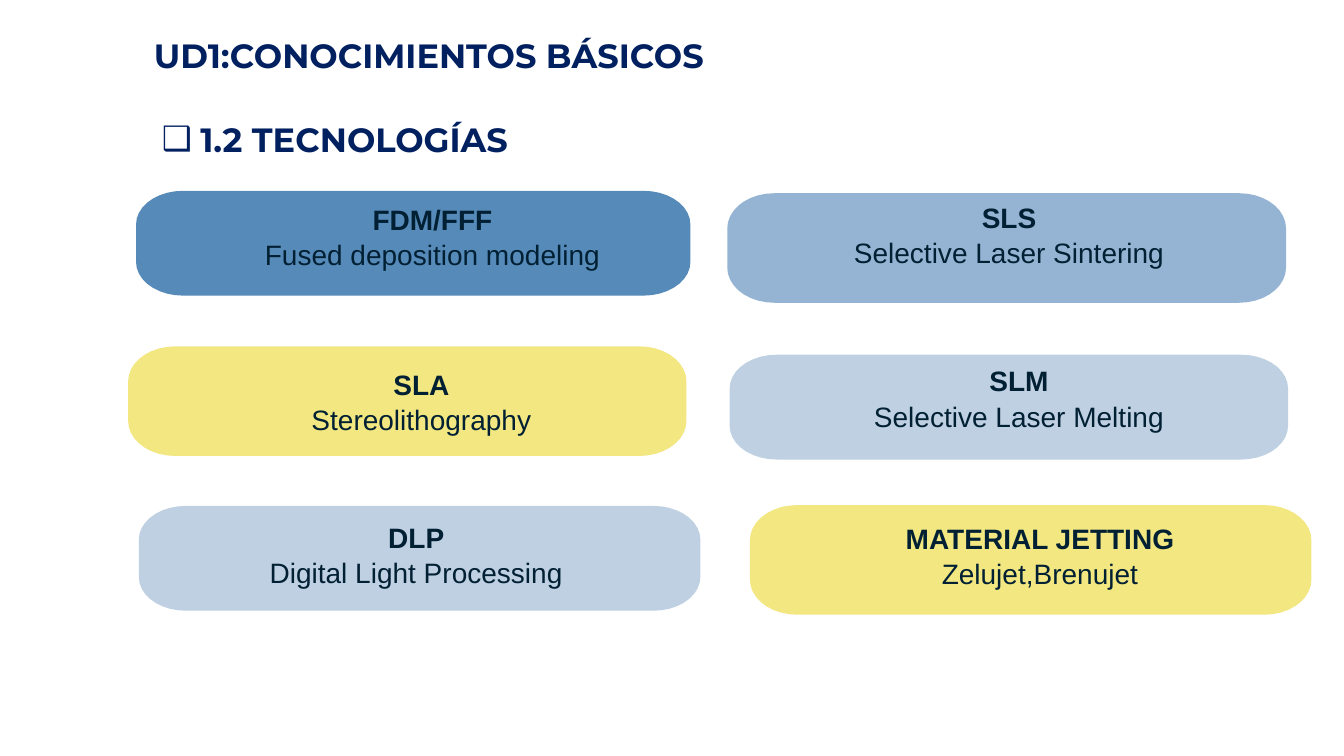
"""Build the slide that lists six 3D printing technologies as rounded cards."""
from math import cos, pi, sin

from lxml import etree
from pptx import Presentation
from pptx import util as u
from pptx.dml.color import RGBColor
from pptx.enum import text
from pptx.oxml.ns import qn

THEME = {
    "navy": "002060", "ink": "012033", "blue": "568AB9", "sky": "95B4D3",
    "pale": "BED0E1", "yellow": "F2E780",
    "heading_font": "Montserrat", "body_font": "Arial",
    "heading_size": 24, "body_size": 20,
}
TITLE = "UD1:CONOCIMIENTOS BÁSICOS"
SUBTITLE = "1.2 TECNOLOGÍAS"

# name, full name, fill, card (left, top, width, height), label (left, top)
TECHNOLOGIES = [
    ("FDM/FFF", "Fused deposition modeling", "blue", (3.43, 4.81, 13.97, 2.64), (4.37, 5.05)),
    ("SLS", "Selective Laser Sintering", "sky", (18.33, 4.87, 14.08, 2.76), (18.9, 5)),
    ("SLA", "Stereolithography", "yellow", (3.23, 8.73, 14.07, 2.76), (4.09, 9.2)),
    ("SLM", "Selective Laser Melting", "pale", (18.39, 8.94, 14.07, 2.64), (19.15, 9.12)),
    ("DLP", "Digital Light Processing", "pale", (3.5, 12.75, 14.15, 2.64), (3.96, 13.06)),
    ("MATERIAL JETTING", "Zelujet,Brenujet", "yellow", (18.9, 12.73, 14.15, 2.76), (19.68, 13.08)),
]
LABEL_SIZE = (13.06, 1.8)
CORNER_WIDTH = 1.18
CORNER_RATIO = 0.32
CORNER_STEPS = 9


def add_text(page, lines, area, *, font, size, color, bold=(True,), align=text.PP_ALIGN.LEFT,
             anchor=text.MSO_ANCHOR.TOP, insets=(0, 0, 0, 0), line_gap=0, spacing=None, bullet=None):
    """Add a text box with one paragraph per line and return it."""
    box = page.shapes.add_textbox(*map(u.Cm, area))
    frame = box.text_frame
    frame.word_wrap = True
    frame.vertical_anchor = anchor
    frame.margin_left, frame.margin_top, frame.margin_right, frame.margin_bottom = map(u.Cm, insets)
    for index, (line, heavy) in enumerate(zip(lines, bold)):
        para = frame.paragraphs[0] if index == 0 else frame.add_paragraph()
        para.alignment = align
        if spacing:
            para.line_spacing = spacing
        if index:
            para.space_before = u.Pt(line_gap)
        if bullet:
            add_bullet(para, bullet, color)
        span = para.add_run()
        span.text = line
        span.font.name = font
        span.font.size = u.Pt(size)
        span.font.bold = heavy
        span.font.color.rgb = RGBColor.from_string(color)
    return box


def add_bullet(para, symbol, color):
    """Give a paragraph a coloured bullet and a hanging indent."""
    props = para._p.get_or_add_pPr()
    props.set("marL", str(u.Cm(0.99)))
    props.set("indent", str(-u.Cm(0.97)))
    tint = etree.SubElement(props, qn("a:buClr"))
    etree.SubElement(tint, qn("a:srgbClr")).set("val", color)
    etree.SubElement(props, qn("a:buFont")).set("typeface", THEME["body_font"])
    etree.SubElement(props, qn("a:buChar")).set("char", symbol)


def add_card(page, area, color):
    """Draw a card whose corners are quarter ellipses."""
    left, top, width, height = area
    rx, ry = CORNER_WIDTH, CORNER_RATIO * height
    centers = [(left + width - rx, top + height - ry), (left + rx, top + height - ry),
               (left + rx, top + ry), (left + width - rx, top + ry)]
    points = []
    for quarter, (x, y) in enumerate(centers):
        for step in range(CORNER_STEPS + 1):
            angle = (quarter + step / CORNER_STEPS) * pi / 2
            points.append((u.Cm(x + rx * cos(angle)), u.Cm(y + ry * sin(angle))))
    builder = page.shapes.build_freeform(*points[0])
    builder.add_line_segments(points[1:], close=True)
    card = builder.convert_to_shape()
    card.shadow.inherit = False
    card.fill.solid()
    card.fill.fore_color.rgb = RGBColor.from_string(color)
    card.line.fill.background()


def main():
    """Lay out the headings and the cards, then save the deck."""
    deck = Presentation()
    deck.slide_width, deck.slide_height = u.Cm(33.87), u.Cm(19.05)
    page = deck.slides.add_slide(deck.slide_layouts[6])
    heading = {"font": THEME["heading_font"], "size": THEME["heading_size"],
               "color": THEME["navy"], "anchor": text.MSO_ANCHOR.MIDDLE}
    add_text(page, [TITLE], (3.63, 0.41, 17.83, 2.08), insets=(0.25, 0.13, 0.25, 0.13),
             spacing=0.9, **heading)
    add_text(page, [SUBTITLE], (4.06, 2.95, 20.6, 1.09), insets=(0, 0.03, 0, 0),
             bullet="❑", **heading)
    for _, _, fill, card, _ in TECHNOLOGIES:
        add_card(page, card, THEME[fill])
    for name, full_name, _, _, label in TECHNOLOGIES:
        add_text(page, [name, full_name], label + LABEL_SIZE, font=THEME["body_font"],
                 size=THEME["body_size"], color=THEME["ink"], bold=(True, False),
                 align=text.PP_ALIGN.CENTER, insets=(0, 0.05, 0, 0), line_gap=1.3)
    deck.save("out.pptx")


if __name__ == "__main__":
    main()
